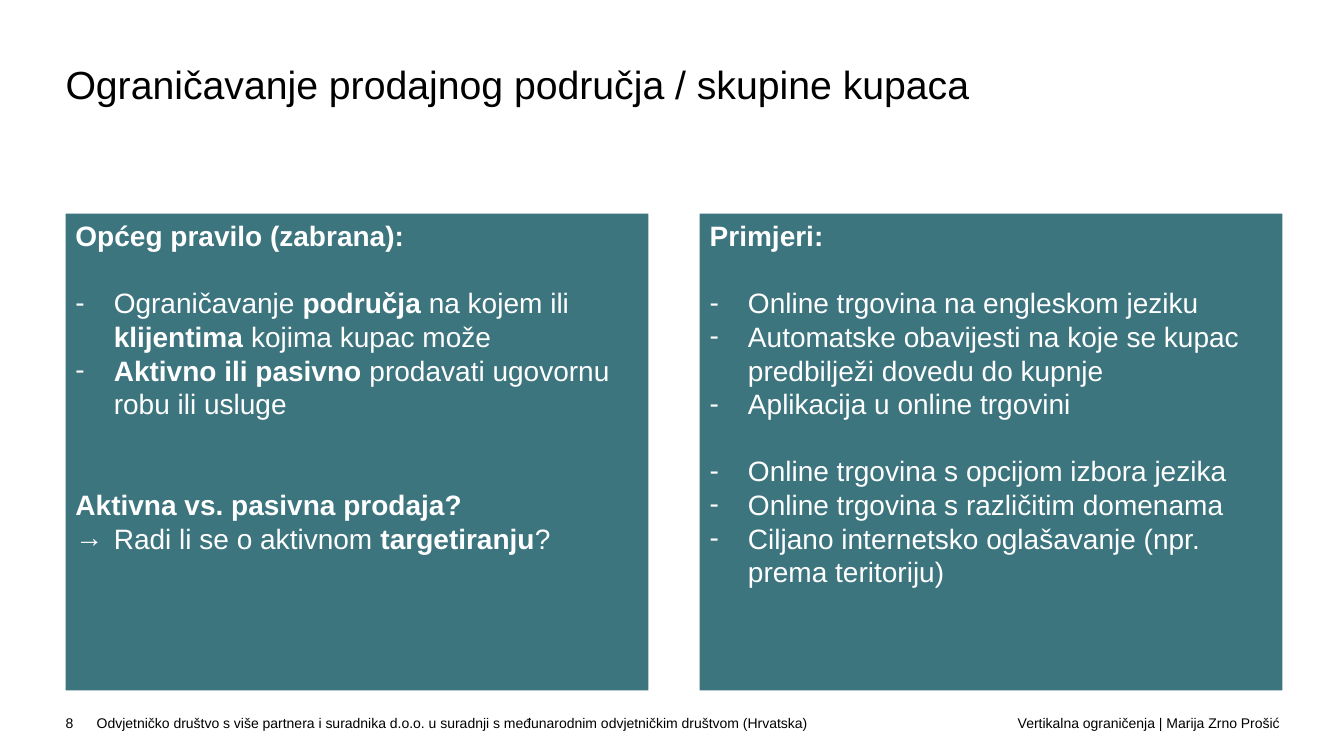
from lxml import etree
from pptx import Presentation
from pptx.dml.color import RGBColor
from pptx.enum.shapes import MSO_SHAPE
from pptx.enum.text import MSO_ANCHOR, MSO_AUTO_SIZE, PP_ALIGN
from pptx.oxml.ns import qn
from pptx.util import Inches, Pt

RECTANGLE = MSO_SHAPE.RECTANGLE
TOP, MIDDLE = MSO_ANCHOR.TOP, MSO_ANCHOR.MIDDLE
LEFT, RIGHT = PP_ALIGN.LEFT, PP_ALIGN.RIGHT

BLACK = RGBColor(0x00, 0x00, 0x00)
WHITE = RGBColor(0xFF, 0xFF, 0xFF)
TEAL = RGBColor(0x0D, 0x53, 0x5F)

FONT = "Arial"
MARGIN = 0.65
LINE = 24  # points per line in the panels
INDENT = Inches(0.38)

# Each paragraph: bullet, blank lines above, spans of (text, bold)
RULE = [
    (None, 0, [("Općeg pravilo (zabrana):", True)]),
    ("-", 1, [("Ograničavanje ", False), ("područja", True), (" na kojem ili ", False),
              ("klijentima ", True), ("kojima kupac može", False)]),
    ("-", 0, [("Aktivno ili pasivno ", True), ("prodavati ugovornu robu ili usluge", False)]),
    (None, 2, [("Aktivna vs. pasivna prodaja?", True)]),
    ("→", 0, [("Radi li se o aktivnom ", False), ("targetiranju", True), ("?", False)]),
]
EXAMPLES = [
    (None, 0, [("Primjeri:", True)]),
    ("-", 1, [("Online trgovina na engleskom jeziku", False)]),
    ("-", 0, [("Automatske obavijesti na koje se kupac predbilježi dovedu do kupnje", False)]),
    ("-", 0, [("Aplikacija u online trgovini", False)]),
    ("-", 1, [("Online trgovina s opcijom izbora jezika", False)]),
    ("-", 0, [("Online trgovina s različitim domenama", False)]),
    ("-", 0, [("Ciljano internetsko oglašavanje (npr. prema teritoriju)", False)]),
]


def add_span(para, text, size, color, bold=False):
    span = para.add_run()
    span.text = text
    span.font.name = FONT
    span.font.size = Pt(size)
    span.font.bold = bold
    span.font.color.rgb = color


def set_bullet(para, char):
    properties = para._p.get_or_add_pPr()
    properties.set("marL", str(INDENT))
    properties.set("indent", str(-INDENT))
    etree.SubElement(properties, qn("a:buFont"), typeface=FONT)
    etree.SubElement(properties, qn("a:buChar"), char=char)


def clear_insets(frame):
    frame.margin_left = frame.margin_right = frame.margin_top = frame.margin_bottom = 0


def place_title(page, left, top, width, height, text):
    title = page.shapes.title
    title.left, title.top = Inches(left), Inches(top)
    title.width, title.height = Inches(width), Inches(height)
    frame = title.text_frame
    clear_insets(frame)
    frame.auto_size = MSO_AUTO_SIZE.NONE
    frame.vertical_anchor = TOP
    para = frame.paragraphs[0]
    para.alignment = LEFT
    para.line_spacing = 0.9
    add_span(para, text, 28, BLACK)


def add_panel(page, left, top, width, height, paragraphs):
    panel = page.shapes.add_shape(RECTANGLE, Inches(left), Inches(top), Inches(width), Inches(height))
    panel.shadow.inherit = False
    panel.line.fill.background()
    panel.fill.solid()
    panel.fill.fore_color.rgb = TEAL
    color = panel._element.spPr.find(qn("a:solidFill")).find(qn("a:srgbClr"))
    etree.SubElement(color, qn("a:alpha"), val="80000")
    frame = panel.text_frame
    frame.word_wrap = True
    frame.vertical_anchor = TOP
    for index, (bullet, blank_lines, spans) in enumerate(paragraphs):
        para = frame.add_paragraph() if index else frame.paragraphs[0]
        if bullet:
            set_bullet(para, bullet)
        para.alignment = LEFT
        para.line_spacing = Pt(LINE)
        para.space_before = Pt(blank_lines * LINE)
        for text, bold in spans:
            add_span(para, text, 20, WHITE, bold)


def add_label(page, left, top, width, height, text, align=LEFT):
    box = page.shapes.add_textbox(Inches(left), Inches(top), Inches(width), Inches(height))
    frame = box.text_frame
    frame.word_wrap = True
    clear_insets(frame)
    frame.vertical_anchor = MIDDLE
    para = frame.paragraphs[0]
    para.alignment = align
    add_span(para, text, 10, BLACK)


def add_footer(page, left, top, width, height):
    number_width, topic_width = 0.31, 3.54
    add_label(page, left, top, number_width, height, "8")
    add_label(page, left + number_width, top, 7.67, height,
              "Odvjetničko društvo s više partnera i suradnika d.o.o. "
              "u suradnji s međunarodnim odvjetničkim društvom (Hrvatska)")
    add_label(page, left + width - topic_width, top, topic_width, height,
              "Vertikalna ograničenja | Marija Zrno Prošić", RIGHT)


def main():
    deck = Presentation()
    deck.slide_width, deck.slide_height = Inches(13.33), Inches(7.5)
    page = deck.slides.add_slide(deck.slide_layouts[5])
    place_title(page, MARGIN, 0.65, 12.03, 0.98, "Ograničavanje prodajnog područja / skupine kupaca")
    panel_width, gap = 5.78, 0.51
    for column, paragraphs in enumerate((RULE, EXAMPLES)):
        add_panel(page, MARGIN + column * (panel_width + gap), 2.12, panel_width, 4.73, paragraphs)
    add_footer(page, MARGIN, 6.85, 12.04, 0.65)
    deck.save("out.pptx")


if __name__ == "__main__":
    main()
